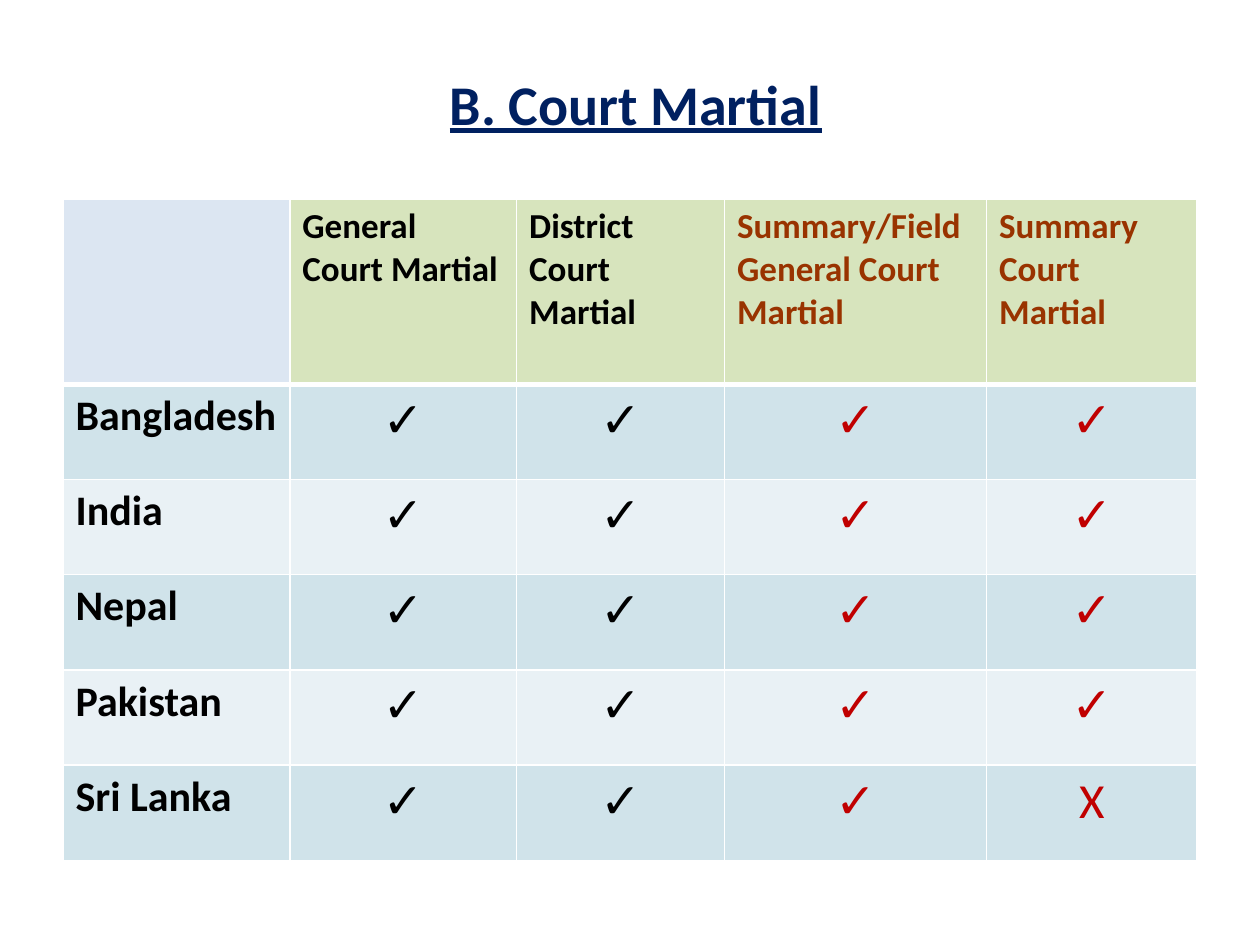
from lxml.etree import SubElement
from pptx import Presentation
from pptx.dml.color import RGBColor
from pptx.enum.text import MSO_ANCHOR, PP_ALIGN
from pptx.oxml.ns import qn
from pptx.util import Inches, Pt

FONT = "Calibri"
BLACK, NAVY, BROWN, RED = "000000", "002060", "993300", "C00000"
CORNER_FILL, HEADER_FILL = "DCE6F2", "D7E4BD"
BAND_FILLS = ["D0E3EA", "E9F1F5"]

COLUMN_WIDTHS = [1.8, 1.8, 1.65, 2.08, 1.67]
HEADER_HEIGHT = 1.47
FIRST_SUMMARY_COLUMN = 3
ROWS = [
    ["", "General Court Martial", "District Court Martial",
     "Summary/Field General Court Martial", "Summary Court Martial"],
    ["Bangladesh", "✓", "✓", "✓", "✓"],
    ["India", "✓", "✓", "✓", "✓"],
    ["Nepal", "✓", "✓", "✓", "✓"],
    ["Pakistan", "✓", "✓", "✓", "✓"],
    ["Sri Lanka", "✓", "✓", "✓", "X"],
]


def color(value):
    return RGBColor.from_string(value)


def set_font(para, size, value, bold):
    font = para.font
    font.name, font.size, font.bold = FONT, Pt(size), bold
    font.color.rgb = color(value)


def set_borders(cell, **widths):
    """Draw white cell edges; the keys are L, R, T and B, the widths points."""
    properties = cell._tc.get_or_add_tcPr()
    for side in "LRTB":
        line = SubElement(properties, qn(f"a:ln{side}"), w=str(Pt(widths.get(side, 1))))
        fill = SubElement(line, qn("a:solidFill"))
        SubElement(fill, qn("a:srgbClr"), val="FFFFFF")


def add_title(page, left, top, width, height):
    title = page.shapes.title
    title.left, title.top = Inches(left), Inches(top)
    title.width, title.height = Inches(width), Inches(height)
    frame = title.text_frame
    frame.text = "B. Court Martial"
    frame.vertical_anchor = MSO_ANCHOR.MIDDLE
    para = frame.paragraphs[0]
    para.alignment = PP_ALIGN.CENTER
    set_font(para, 32, NAVY, True)
    para.font.underline = True


def style_header(cell, column):
    set_borders(cell, B=3)
    cell.fill.solid()
    cell.fill.fore_color.rgb = color(HEADER_FILL if column else CORNER_FILL)
    text_color = BROWN if column >= FIRST_SUMMARY_COLUMN else BLACK
    set_font(cell.text_frame.paragraphs[0], 20, text_color, True)


def style_body(cell, row, column):
    set_borders(cell, T=3 if row == 1 else 1)
    cell.fill.solid()
    cell.fill.fore_color.rgb = color(BAND_FILLS[(row - 1) % 2])
    para = cell.text_frame.paragraphs[0]
    if column == 0:
        set_font(para, 24, BLACK, True)
    else:
        para.alignment = PP_ALIGN.CENTER
        set_font(para, 28, RED if column >= FIRST_SUMMARY_COLUMN else BLACK, False)


def add_court_table(page, left, top, width, height):
    table = page.shapes.add_table(
        len(ROWS), len(COLUMN_WIDTHS),
        Inches(left), Inches(top), Inches(width), Inches(height)).table
    for column, column_width in zip(table.columns, COLUMN_WIDTHS):
        column.width = Inches(column_width)
    body_height = (height - HEADER_HEIGHT) / (len(ROWS) - 1)
    for row, texts in enumerate(ROWS):
        table.rows[row].height = Inches(body_height if row else HEADER_HEIGHT)
        for column, text in enumerate(texts):
            cell = table.cell(row, column)
            cell.text = text
            if row == 0:
                style_header(cell, column)
            else:
                style_body(cell, row, column)


def main():
    deck = Presentation()
    deck.slide_width, deck.slide_height = Inches(10), Inches(7.5)
    page = deck.slides.add_slide(deck.slide_layouts[5])
    add_title(page, 1.92, 0.3, 6.25, 1.03)
    add_court_table(page, 0.5, 1.58, 9, 5.25)
    deck.save("out.pptx")


if __name__ == "__main__":
    main()
